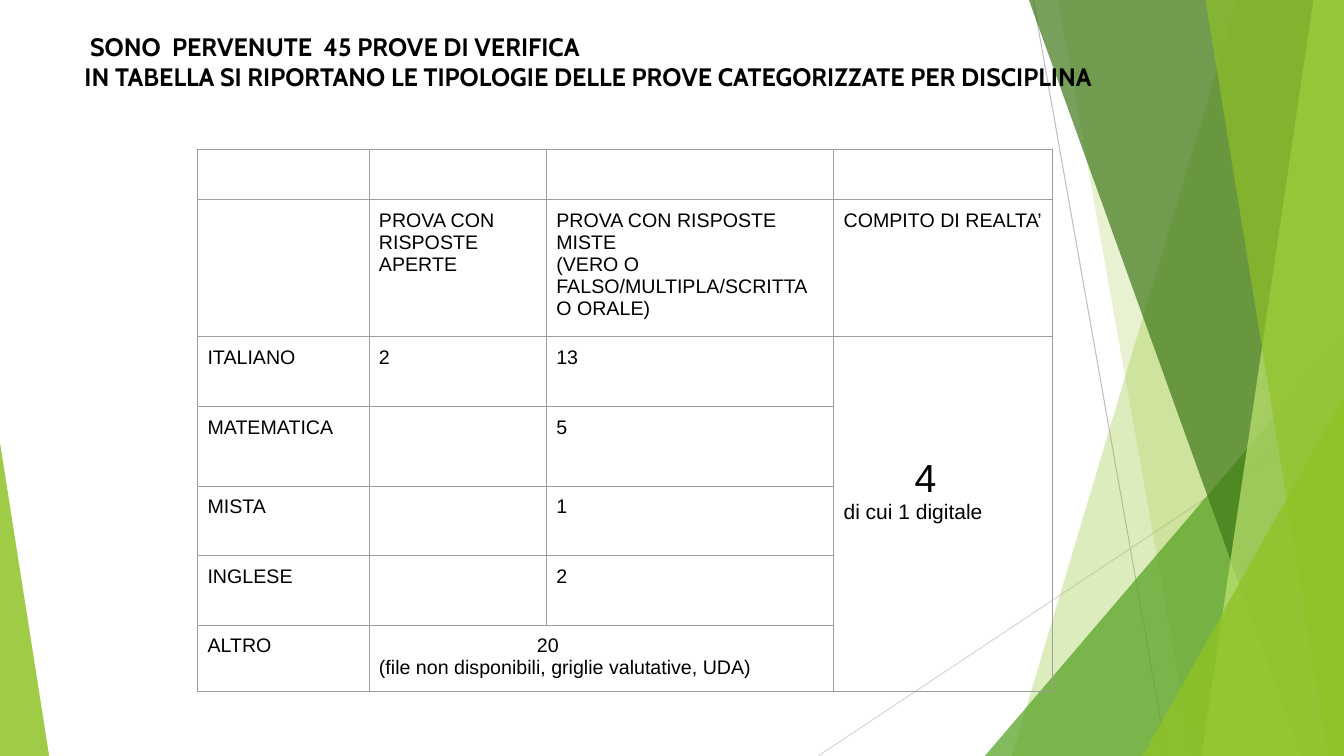
from dataclasses import dataclass
from lxml.etree import SubElement
from pptx import Presentation
from pptx.dml.color import RGBColor
from pptx.enum.shapes import MSO_CONNECTOR, MSO_SHAPE
from pptx.enum.text import MSO_ANCHOR
from pptx.oxml import parse_xml
from pptx.oxml.ns import nsdecls, qn
from pptx.util import Cm, Pt


@dataclass(frozen=True)
class Theme:
    lime: str = "90C226"
    green: str = "54A021"
    dark: str = "3F7818"
    pale: str = "BFE471"
    ink: str = "000000"
    rule: str = "9E9E9E"
    thin: tuple = ("BFBFBF", "D8D8D8")
    head: str = "Cabin"
    body: str = "Arial"
    title: float = 18
    cell: float = 14
    note: float = 15
    big: float = 28


T = Theme()
WIDE, HIGH = 33.87, 19.05


def paint(shape, color, alpha):
    shape.shadow.inherit = False
    shape.fill.solid()
    shape.fill.fore_color.rgb = RGBColor.from_string(color)
    shape.line.fill.background()
    tint = shape.fill._xPr.find(".//" + qn("a:srgbClr"))
    SubElement(tint, qn("a:alpha")).set("val", str(alpha * 1000))


def write(para, text, size, font=T.body, bold=False, indent=0):
    run = para.add_run()
    run.text = text
    run.font.size = Pt(size)
    run.font.name = font
    run.font.bold = bold
    run.font.color.rgb = RGBColor.from_string(T.ink)
    if indent:
        para._p.get_or_add_pPr().set("marL", str(Cm(indent)))


def lines(frame, rows):
    """Each row is the text, its size and then any options."""
    for i, (text, size, opts) in enumerate(rows):
        para = frame.paragraphs[0] if i == 0 else frame.add_paragraph()
        write(para, text, size, **opts)


# Background facets
def wedge(slide, top, foot, color, alpha):
    """Fill from a slanted left edge to the right side of the slide."""
    pen = slide.shapes.build_freeform(Cm(top), 0, scale=1.0)
    pen.add_line_segments([(Cm(WIDE), 0), (Cm(WIDE), Cm(HIGH)),
                           (Cm(foot), Cm(HIGH))], close=True)
    paint(pen.convert_to_shape(), color, alpha)


def peak(slide, left, top, width, tip, color, alpha):
    """Right triangle that stands on the foot of the slide."""
    shape = slide.shapes.add_shape(MSO_SHAPE.ISOSCELES_TRIANGLE, Cm(left),
                                   Cm(top), Cm(width), Cm(HIGH - top))
    shape.adjustments[0] = tip
    paint(shape, color, alpha)


def facets(slide):
    ends = [(26.04, 0, 29.41, HIGH), (WIDE, 10.24, 20.62, HIGH)]
    for color, (x1, y1, x2, y2) in zip(T.thin, ends):
        line = slide.shapes.add_connector(MSO_CONNECTOR.STRAIGHT, Cm(x1),
                                          Cm(y1), Cm(x2), Cm(y2))
        line.line.color.rgb = RGBColor.from_string(color)
        line.line.width = Pt(0.75)
        SubElement(line._element.spPr, qn("a:effectLst"))
    wedge(slide, 31.19, 25.5, T.lime, 30)
    wedge(slide, 26.67, 30.05, T.lime, 20)
    peak(slide, 24.82, 8.46, WIDE - 24.82, 1, T.green, 72)
    wedge(slide, 25.93, 32.79, T.dark, 70)
    wedge(slide, 33.1, 30.28, T.pale, 70)
    wedge(slide, 30.38, 33.48, T.lime, 65)
    peak(slide, 28.8, 9.98, WIDE - 28.8, 1, T.lime, 80)
    peak(slide, 0, 11.15, 1.24, 0, T.lime, 85)


# Title
def title(slide, left, top, width, height):
    box = slide.shapes.add_textbox(Cm(left), Cm(top), Cm(width), Cm(height))
    frame = box.text_frame
    frame.word_wrap = True
    frame.vertical_anchor = MSO_ANCHOR.TOP
    frame.margin_top = Cm(0.79)
    look = {"font": T.head, "bold": True}
    lines(frame, [
        (" SONO  PERVENUTE  45 PROVE DI VERIFICA", T.title, look),
        ("IN TABELLA SI RIPORTANO LE TIPOLOGIE DELLE PROVE CATEGORIZZATE "
         "PER DISCIPLINA", T.title, look)])


# Table of tests by subject
def frame_cell(cell):
    cell.fill.background()
    cell.margin_left = cell.margin_right = Cm(0.25)
    cell.margin_top = cell.margin_bottom = Cm(0.25)
    props = cell._tc.get_or_add_tcPr()
    for i, side in enumerate(("lnL", "lnR", "lnT", "lnB")):
        props.insert(i, parse_xml(
            f'<a:{side} {nsdecls("a")} w="9525"><a:solidFill>'
            f'<a:srgbClr val="{T.rule}"/></a:solidFill></a:{side}>'))


def tests(slide, left, top):
    cols = [4.32, 4.47, 7.24, 5.51]
    rows = [1.21, 3.3, 1.75, 2.01, 1.75, 1.75, 1.65]
    data = [
        [],
        ["", "PROVA CON RISPOSTE APERTE",
         "PROVA CON RISPOSTE MISTE\n(VERO O FALSO/MULTIPLA/SCRITTA O ORALE)",
         "COMPITO DI REALTA’"],
        ["ITALIANO", "2", "13"],
        ["MATEMATICA", "", "5"],
        ["MISTA", "", "1"],
        ["INGLESE", "", "2"],
        ["ALTRO"],
    ]
    grid = slide.shapes.add_table(len(rows), len(cols), Cm(left), Cm(top),
                                  Cm(sum(cols)), Cm(sum(rows))).table
    grid.first_row = grid.horz_banding = False
    for col, width in zip(grid.columns, cols):
        col.width = Cm(width)
    for row, height in zip(grid.rows, rows):
        row.height = Cm(height)
    for cell in grid.iter_cells():
        frame_cell(cell)
    for r, row in enumerate(data):
        for c, text in enumerate(row):
            if text:
                lines(grid.cell(r, c).text_frame,
                      [(part, T.cell, {}) for part in text.split("\n")])

    # Merged cells
    real = grid.cell(2, 3)
    real.merge(grid.cell(6, 3))
    real.margin_top = Cm(3.02)
    lines(real.text_frame, [("4", T.big, {"indent": 1.79}),
                            ("di cui 1 digitale", T.note, {})])
    other = grid.cell(6, 1)
    other.merge(grid.cell(6, 2))
    lines(other.text_frame, [
        ("20", T.cell, {"indent": 3.98}),
        ("(file non disponibili, griglie valutative, UDA)", T.cell, {})])


def main():
    deck = Presentation()
    deck.slide_width, deck.slide_height = Cm(WIDE), Cm(HIGH)
    slide = deck.slides.add_slide(deck.slide_layouts[6])
    facets(slide)
    title(slide, 1.88, 0, 26.8, 3.02)
    tests(slide, 4.98, 3.76)
    deck.save("out.pptx")


if __name__ == "__main__":
    main()
